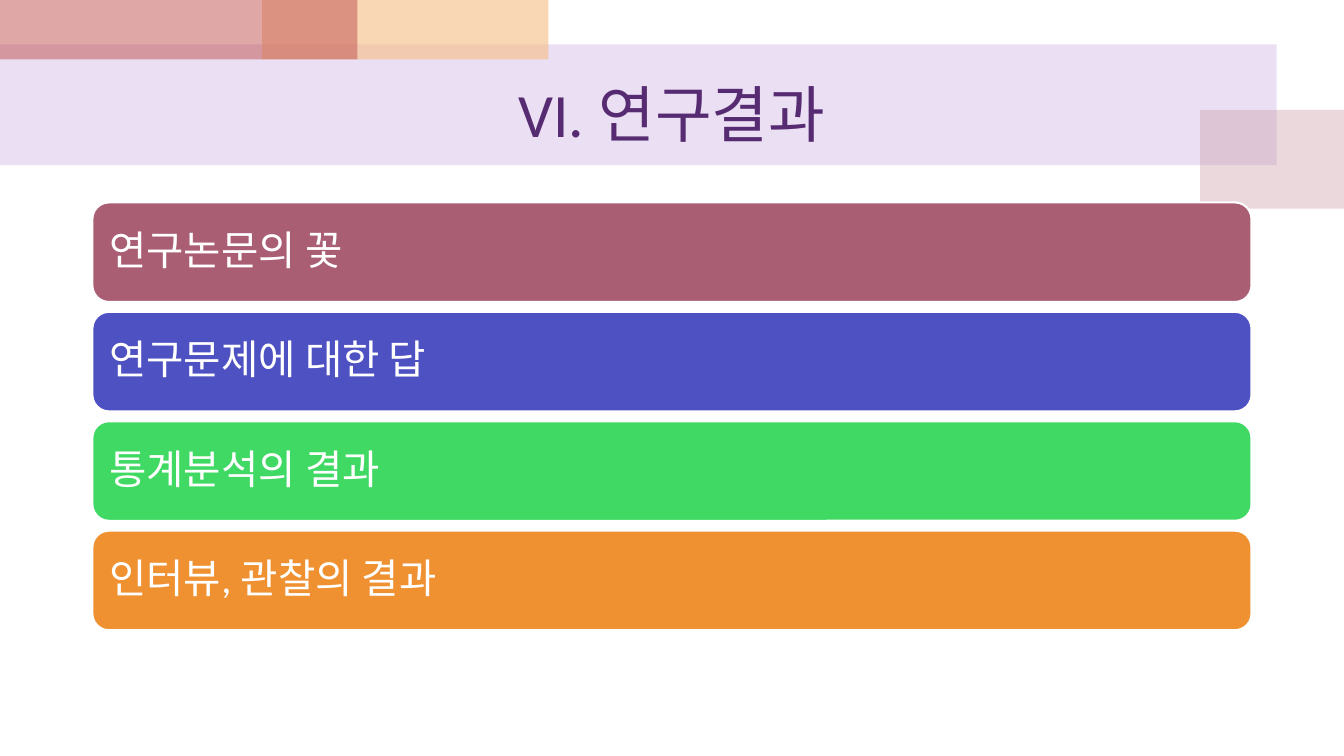
from dataclasses import dataclass

from lxml.etree import SubElement
from pptx import Presentation
from pptx.dml.color import RGBColor
from pptx.enum.shapes import MSO_SHAPE as Preset
from pptx.enum.text import MSO_ANCHOR as Anchor, PP_ALIGN as Align
from pptx.oxml.ns import qn
from pptx.util import Pt


@dataclass(frozen=True)
class Theme:
    font: str = "Calibri"
    title_size: float = 44
    row_size: float = 29
    title: str = "562B71"
    white: str = "FFFFFF"
    band: str = "BF98D8"
    rose: str = "CC9EAC"
    peach: str = "F5BC83"
    red: str = "C0504D"
    rows: tuple = ("AA5E74", "4E51C2", "3FD963", "EF9031")


@dataclass(frozen=True)
class Box:
    left: float
    top: float
    width: float
    height: float

    def lengths(self):
        return Pt(self.left), Pt(self.top), Pt(self.width), Pt(self.height)


THEME = Theme()
ROWS = ("연구논문의 꽃", "연구문제에 대한 답", "통계분석의 결과", "인터뷰, 관찰의 결과")


def add_filled(slide, preset, box, color, opacity=100):
    shape = slide.shapes.add_shape(preset, *box.lengths())
    shape.shadow.inherit = False
    shape.fill.solid()
    shape.fill.fore_color.rgb = RGBColor.from_string(color)
    shape.line.fill.background()
    if opacity < 100:
        color_element = shape.fill._xPr.find(qn("a:solidFill"))[0]
        SubElement(color_element, qn("a:alpha"), val=str(opacity * 1000))
    return shape


def write_text(shape, text, size, color, align):
    frame = shape.text_frame
    frame.word_wrap = True
    frame.vertical_anchor = Anchor.MIDDLE
    paragraph = frame.paragraphs[0]
    paragraph.alignment = align
    run = paragraph.add_run()
    run.text = text
    run.font.name = THEME.font
    run.font.size = Pt(size)
    run.font.color.rgb = RGBColor.from_string(color)
    return paragraph


def add_header(slide, box, title):
    right = box.left + box.width
    tab_height = 42.5
    blocks = (
        (Box(box.left, box.top + 31.7, 912, 86.4), THEME.band, 30),
        (Box(right - 102.8, box.top + 78.5, 102.8, 70.5), THEME.rose, 40),
        (Box(box.left + 187.2, box.top, 204.5, tab_height), THEME.peach, 60),
        (Box(box.left, box.top, 255.4, tab_height), THEME.red, 50),
    )
    for block, color, opacity in blocks:
        add_filled(slide, Preset.RECTANGLE, block, color, opacity)
    title_box = Box(box.left + 48, box.top + tab_height, box.width - 96, 75.6)
    shape = slide.shapes.add_textbox(*title_box.lengths())
    write_text(shape, title, THEME.title_size, THEME.title, Align.CENTER)


def add_rows(slide, box, texts):
    gap = 7
    inset = Pt(8.6)
    height = (box.height - gap * (len(texts) - 1)) / len(texts)
    for index, (text, color) in enumerate(zip(texts, THEME.rows)):
        row = Box(box.left, box.top + index * (height + gap), box.width, height)
        shape = add_filled(slide, Preset.ROUNDED_RECTANGLE, row, color)
        shape.line.color.rgb = RGBColor.from_string(THEME.white)
        shape.line.width = Pt(1.5)
        frame = shape.text_frame
        frame.margin_left = frame.margin_right = inset
        frame.margin_top = frame.margin_bottom = inset
        paragraph = write_text(shape, text, THEME.row_size, THEME.white, Align.LEFT)
        paragraph.line_spacing = 0.9
        paragraph.space_after = Pt(10)


def main():
    presentation = Presentation()
    presentation.slide_width = Pt(960)
    presentation.slide_height = Pt(540)
    slide = presentation.slides.add_slide(presentation.slide_layouts[6])
    add_header(slide, Box(0, 0, 960, 149), "VI. 연구결과")
    add_rows(slide, Box(66, 144.6, 828, 305.6), ROWS)
    presentation.save("out.pptx")


if __name__ == "__main__":
    main()
